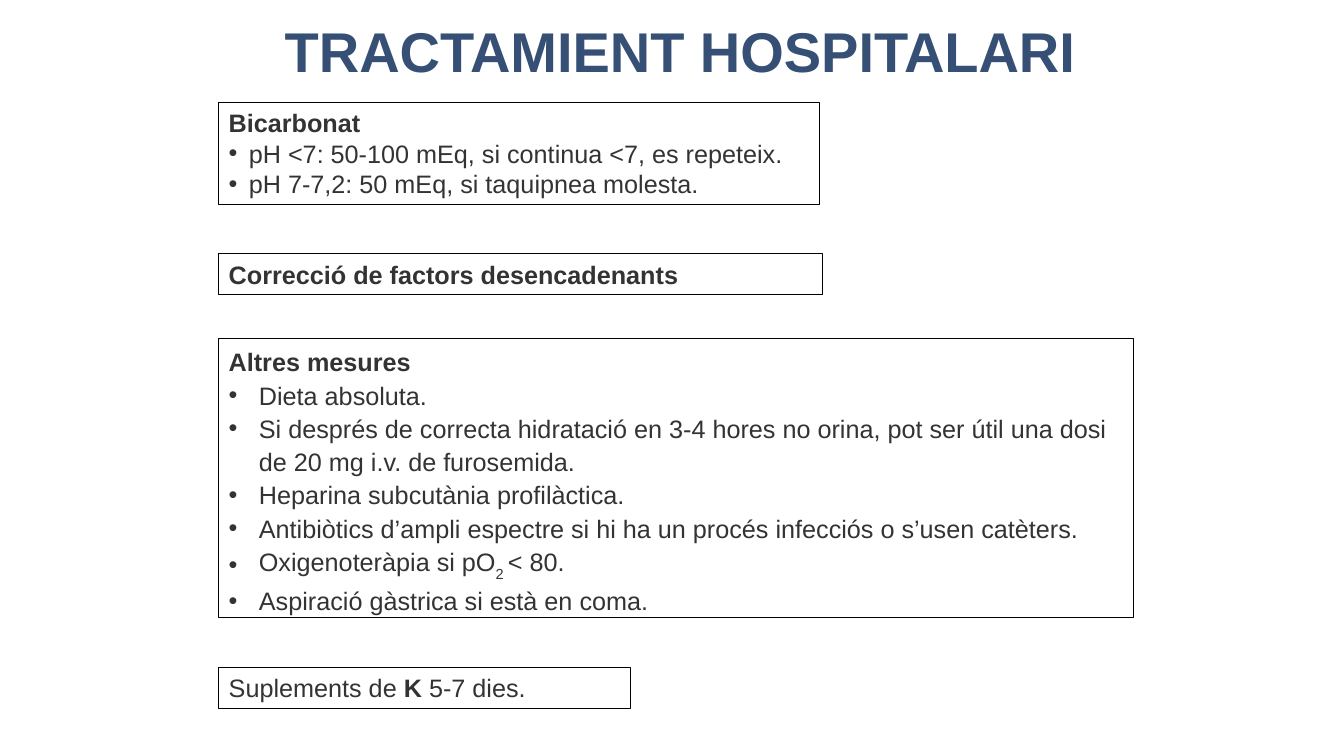
from lxml.etree import SubElement
from pptx import Presentation
from pptx.dml.color import RGBColor
from pptx.enum.shapes import MSO_SHAPE as Shape
from pptx.enum.text import MSO_ANCHOR as Anchor, MSO_AUTO_SIZE as AutoSize, PP_ALIGN as Align
from pptx.oxml.ns import qn
from pptx.util import Inches, Pt

COLORS = {"title": "364F74", "text": "333333", "line": "000000"}
LEFT = 2.17


def add_span(para, text, size=18, color="text", bold=False, baseline=0):
    span = para.add_run()
    span.text = text
    span.font.name = "Arial"
    span.font.size = Pt(size)
    span.font.bold = bold
    span.font.color.rgb = RGBColor.from_string(COLORS[color])
    if baseline:
        span._r.get_or_add_rPr().set("baseline", str(baseline * 1000))


deck = Presentation()
deck.slide_width, deck.slide_height = Inches(13.33), Inches(7.5)
page = deck.slides.add_slide(deck.slide_layouts[5])

title = page.shapes.title
title.left, title.top = Inches(1.08), Inches(0.14)
title.width, title.height = Inches(11.33), Inches(0.71)
title.text_frame.auto_size = AutoSize.NONE
title.text_frame.vertical_anchor = Anchor.MIDDLE
title_para = title.text_frame.paragraphs[0]
title_para.alignment = Align.CENTER
add_span(title_para, "TRACTAMIENT HOSPITALARI", size=40, color="title", bold=True)

# Each measure: top, width, height, indent, line spacing, heading, bullets.
# A heading or bullet is a list of (text, format) spans.
BOLD = {"bold": True}
measures = [
    (1.02, 5.96, 1.01, 0.2, 1.0, [("Bicarbonat", BOLD)], [
        [("pH <7: 50-100 mEq, si continua <7, es repeteix.", {})],
        [("pH 7-7,2: 50 mEq, si taquipnea molesta.", {})],
    ]),
    (2.52, 5.99, 0.4, 0.2, 1.0, [("Correcció de factors desencadenants", BOLD)], []),
    (3.36, 9.07, 2.77, 0.3, 1.1, [("Altres mesures", BOLD)], [
        [("Dieta absoluta.", {})],
        [("Si després de correcta hidratació en 3-4 hores no orina, "
          "pot ser útil una dosi de 20 mg i.v. de furosemida.", {})],
        [("Heparina subcutània profilàctica.", {})],
        [("Antibiòtics d’ampli espectre si hi ha un procés infecciós o s’usen catèters.", {})],
        [("Oxigenoteràpia si pO", {}), ("2 ", {"baseline": -30}), ("< 80.", {})],
        [("Aspiració gàstrica si està en coma.", {})],
    ]),
    (6.62, 4.08, 0.41, 0.2, 1.0,
     [("Suplements de ", {}), ("K ", BOLD), ("5-7 dies.", {})], []),
]

for top, width, height, indent, spacing, heading, bullets in measures:
    box = page.shapes.add_shape(
        Shape.RECTANGLE, Inches(LEFT), Inches(top), Inches(width), Inches(height))
    box.shadow.inherit = False
    box.fill.background()
    box.line.color.rgb = RGBColor.from_string(COLORS["line"])
    box.line.width = Pt(0.75)
    frame = box.text_frame
    frame.word_wrap = True
    frame.auto_size = AutoSize.SHAPE_TO_FIT_TEXT
    frame.vertical_anchor = Anchor.TOP
    for index, spans in enumerate([heading, *bullets]):
        para = frame.add_paragraph() if index else frame.paragraphs[0]
        para.alignment = Align.LEFT
        para.line_spacing = spacing
        props = para._p.get_or_add_pPr()
        props.set("marL", str(Inches(indent)))
        props.set("indent", str(-Inches(indent)))
        if index:
            SubElement(props, qn("a:buFont")).set("typeface", "Arial")
            SubElement(props, qn("a:buChar")).set("char", "•")
        for text, style in spans:
            add_span(para, text, **style)

deck.save("out.pptx")
